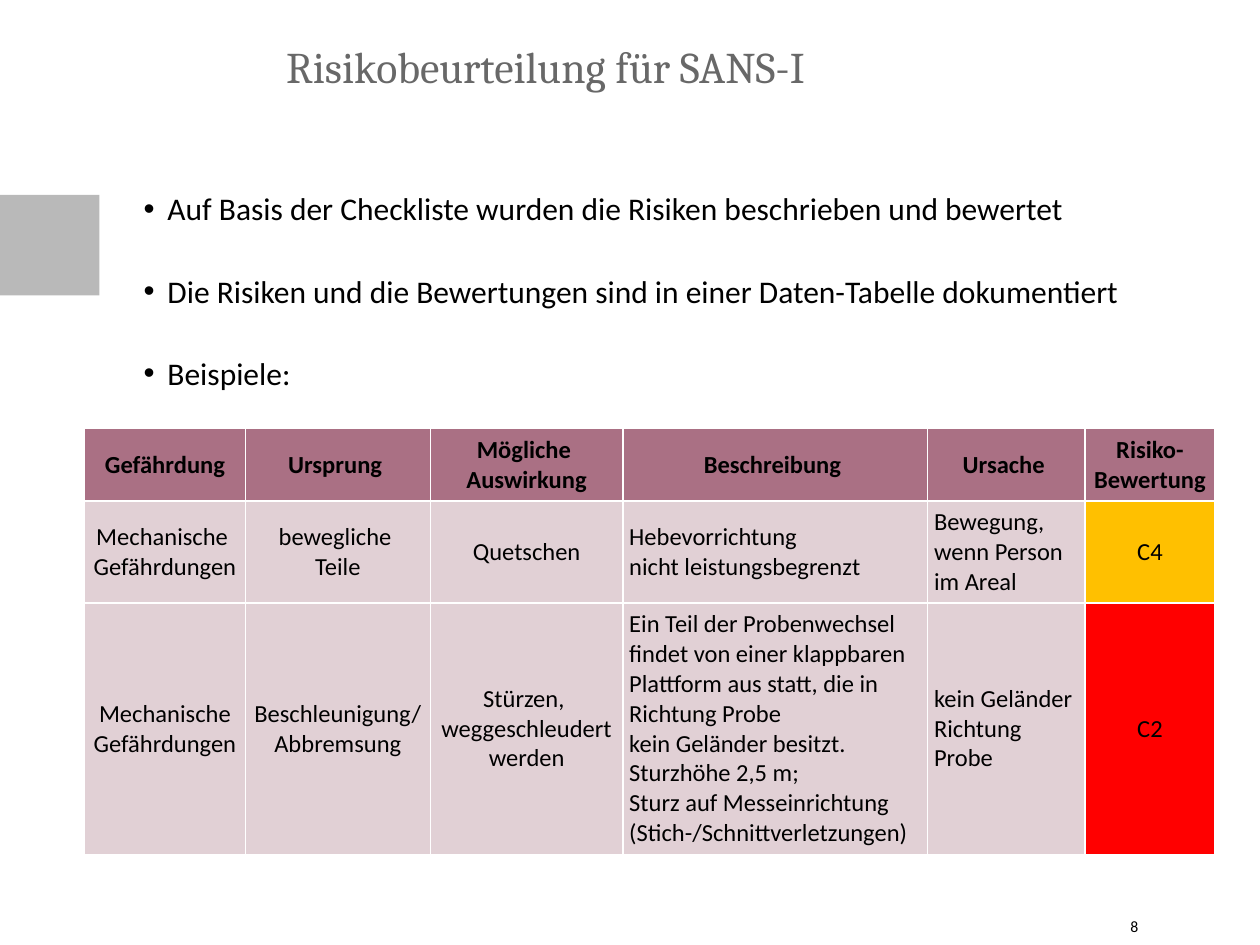
"""Build the risk assessment slide with its bullet points and example table."""
from dataclasses import dataclass

from lxml.etree import SubElement
from pptx import Presentation
from pptx.dml.color import RGBColor
from pptx.enum.shapes import MSO_SHAPE
from pptx.enum.text import MSO_ANCHOR as Anchor, MSO_AUTO_SIZE as AutoSize, PP_ALIGN as Align
from pptx.oxml.ns import qn
from pptx.util import Pt


@dataclass(frozen=True)
class Theme:
    heading_font: str = "Cambria"
    body_font: str = "Calibri"
    heading: str = "686868"
    ink: str = "000000"
    marker: str = "B9B9B9"
    header: str = "AA7084"
    cell: str = "E1D0D5"
    medium_risk: str = "FFC000"
    high_risk: str = "FF0000"
    border: str = "FFFFFF"
    title_size: int = 25
    bullet_size: int = 18
    table_size: int = 14
    number_size: int = 9


theme = Theme()


def write(paragraph, text, size, color=theme.ink, font=theme.body_font, bold=False):
    for index, line in enumerate(text.split("\n")):
        if index:
            paragraph.add_line_break()
        run = paragraph.add_run()
        run.text = line
        run.font.size = Pt(size)
        run.font.name = font
        run.font.bold = bold
        run.font.color.rgb = RGBColor.from_string(color)


def prepare(frame):
    frame.margin_left = frame.margin_top = frame.margin_right = frame.margin_bottom = 0
    frame.word_wrap = True
    frame.auto_size = AutoSize.NONE
    frame.vertical_anchor = Anchor.TOP
    return frame


deck = Presentation()
deck.slide_width, deck.slide_height = Pt(720), Pt(540)
slide = deck.slides.add_slide(deck.slide_layouts[5])

marker = slide.shapes.add_shape(MSO_SHAPE.RECTANGLE, Pt(0), Pt(111.4), Pt(56.8), Pt(57.4))
marker.shadow.inherit = False
marker.fill.solid()
marker.fill.fore_color.rgb = RGBColor.from_string(theme.marker)
marker.line.fill.background()

points = [
    "Auf Basis der Checkliste wurden die Risiken beschrieben und bewertet",
    "Die Risiken und die Bewertungen sind in einer Daten-Tabelle dokumentiert",
    "Beispiele:",
]
findings = prepare(slide.shapes.add_textbox(Pt(82), Pt(106), Pt(610), Pt(130)).text_frame)
for index, point in enumerate(points):
    finding = findings.add_paragraph() if index else findings.paragraphs[0]
    properties = finding._p.get_or_add_pPr()
    properties.set("marL", str(Pt(13.7)))
    properties.set("indent", str(-Pt(13.7)))
    bullet_color = SubElement(properties, qn("a:buClr"))
    SubElement(bullet_color, qn("a:srgbClr"), val=theme.ink)
    SubElement(properties, qn("a:buFont"), typeface="Arial")
    SubElement(properties, qn("a:buChar"), char="•")
    finding.line_spacing = 1.1
    if index:
        finding.space_before = Pt(23.3)
    write(finding, point, theme.bullet_size)

title = slide.shapes.title
title.left, title.top, title.width, title.height = Pt(163.5), Pt(23), Pt(528.5), Pt(40)
heading = prepare(title.text_frame).paragraphs[0]
heading.alignment = Align.LEFT
write(heading, "Risikobeurteilung für SANS-I", theme.title_size, theme.heading, theme.heading_font)

page_number = prepare(slide.shapes.add_textbox(Pt(646), Pt(524), Pt(45), Pt(16)).text_frame)
write(page_number.paragraphs[0], "8", theme.number_size)

risks = [
    ["Gefährdung", "Ursprung ", "Mögliche \nAuswirkung", "Beschreibung ", "Ursache ",
     "Risiko-\nBewertung"],
    ["Mechanische \nGefährdungen", "bewegliche \nTeile", "Quetschen",
     "Hebevorrichtung \nnicht leistungsbegrenzt", "Bewegung, \nwenn Person \nim Areal", "C4"],
    ["Mechanische\nGefährdungen", "Beschleunigung/\nAbbremsung",
     "Stürzen, \nweggeschleudert\nwerden",
     "Ein Teil der Probenwechsel \nfindet von einer klappbaren \nPlattform aus statt, die in \n"
     "Richtung Probe \nkein Geländer besitzt.\nSturzhöhe 2,5 m;\nSturz auf Messeinrichtung \n"
     "(Stich-/Schnittverletzungen)",
     "kein Geländer \nRichtung Probe", "C2"],
]
rating_fills = {"C4": theme.medium_risk, "C2": theme.high_risk}
left_aligned = {3, 4}
column_widths = [91.8, 105.8, 110, 174.2, 90, 74]
row_heights = [41, 58, 143.4]
risk_table = slide.shapes.add_table(
    len(risks), len(column_widths), Pt(48.4), Pt(245),
    Pt(sum(column_widths)), Pt(sum(row_heights))).table
risk_table.horz_banding = False
for column, width in zip(risk_table.columns, column_widths):
    column.width = Pt(width)
for row, height in zip(risk_table.rows, row_heights):
    row.height = Pt(height)

for row_index, risk in enumerate(risks):
    is_header = row_index == 0
    for column_index, text in enumerate(risk):
        cell = risk_table.cell(row_index, column_index)
        cell.margin_left = cell.margin_top = cell.margin_right = cell.margin_bottom = Pt(3.6)
        cell.vertical_anchor = Anchor.MIDDLE
        for side in ("a:lnL", "a:lnR", "a:lnT", "a:lnB"):
            edge = SubElement(cell._tc.get_or_add_tcPr(), qn(side), w=str(Pt(1)))
            edge_fill = SubElement(edge, qn("a:solidFill"))
            SubElement(edge_fill, qn("a:srgbClr"), val=theme.border)
        cell.fill.solid()
        fill = theme.header if is_header else rating_fills.get(text, theme.cell)
        cell.fill.fore_color.rgb = RGBColor.from_string(fill)
        entry = cell.text_frame.paragraphs[0]
        centered = is_header or column_index not in left_aligned
        entry.alignment = Align.CENTER if centered else Align.LEFT
        write(entry, text, theme.table_size, bold=is_header)

deck.save("out.pptx")
